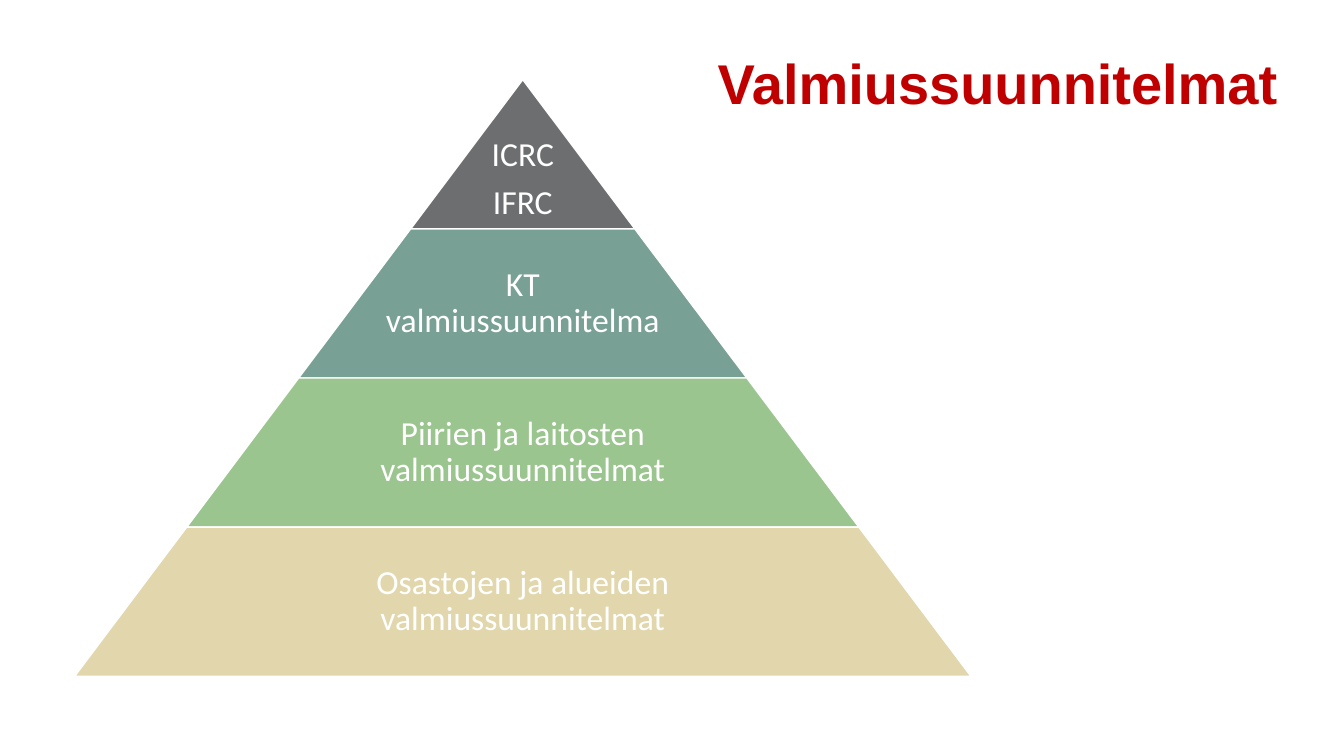
import pptx
import pptx.util
import pptx.dml.color
import pptx.enum.shapes
import pptx.enum.text

Inches, Pt = pptx.util.Inches, pptx.util.Pt
ALIGN, ANCHOR = pptx.enum.text.PP_ALIGN, pptx.enum.text.MSO_ANCHOR
TRAPEZOID = pptx.enum.shapes.MSO_SHAPE.TRAPEZOID

LEVELS = [
    ("6D6E70", ["ICRC", "IFRC"]),
    ("78A094", ["KT valmiussuunnitelma"]),
    ("9BC58E", ["Piirien ja laitosten valmiussuunnitelmat"]),
    ("E2D7AC", ["Osastojen ja alueiden valmiussuunnitelmat"]),
]


def paint(target, color):
    """Give a fill a solid colour."""
    target.solid()
    target.fore_color.rgb = pptx.dml.color.RGBColor.from_string(color)


def write(slide, box, lines, font, size, color, anchor, pads):
    """Add a text box and return its paragraphs."""
    frame = slide.shapes.add_textbox(*map(Inches, box)).text_frame
    frame.word_wrap = True
    frame.vertical_anchor = anchor
    side, top, base = map(Inches, pads)
    frame.margin_left = frame.margin_right = side
    frame.margin_top, frame.margin_bottom = top, base
    frame.text = "\n".join(lines)
    for line in frame.paragraphs:
        line.font.name, line.font.size = font, Pt(size)
        paint(line.font.fill, color)
    return frame.paragraphs


def title(slide, box, text):
    """Write the bold red heading."""
    for line in write(slide, box, [text], "Arial", 40, "C00000",
                      ANCHOR.BOTTOM, (0.1, 0.05, 0.05)):
        line.font.bold = True


def pyramid(slide, box, levels):
    """Stack equal bands that widen from the tip to the base."""
    left, top, width, height = box
    step, tall = width / len(levels), height / len(levels)
    for row, (color, lines) in enumerate(levels):
        wide = step * (row + 1)
        x, y = left + (width - wide) / 2, top + row * tall
        band = slide.shapes.add_shape(TRAPEZOID, *map(Inches, (x, y, wide, tall)))
        band.adjustments[0] = step / 2 / tall
        band.shadow.inherit = False
        paint(band.fill, color)
        paint(band.line.fill, "FFFFFF")
        band.line.width = Pt(1)
        tip = row == 0
        room = wide if tip else wide * 0.65
        area = (left + (width - room) / 2, y, room, tall)
        anchor = ANCHOR.BOTTOM if tip else ANCHOR.MIDDLE
        pads = (0.03, 0.03, 0.07 if tip else 0.03)
        for line in write(slide, area, lines, "Calibri", 24, "FFFFFF", anchor, pads):
            line.alignment = ALIGN.CENTER
            line.line_spacing = 0.9
            line.space_after = Pt(8.4)


def main():
    """Build the slide and save it."""
    deck = pptx.Presentation()
    deck.slide_width, deck.slide_height = Inches(13.33), Inches(7.5)
    slide = deck.slides.add_slide(deck.slide_layouts[6])
    pyramid(slide, (0.74, 0.79, 8.89, 5.92), LEVELS)
    title(slide, (7.02, 0.43, 6.31, 0.77), "Valmiussuunnitelmat")
    deck.save("out.pptx")


if __name__ == "__main__":
    main()
